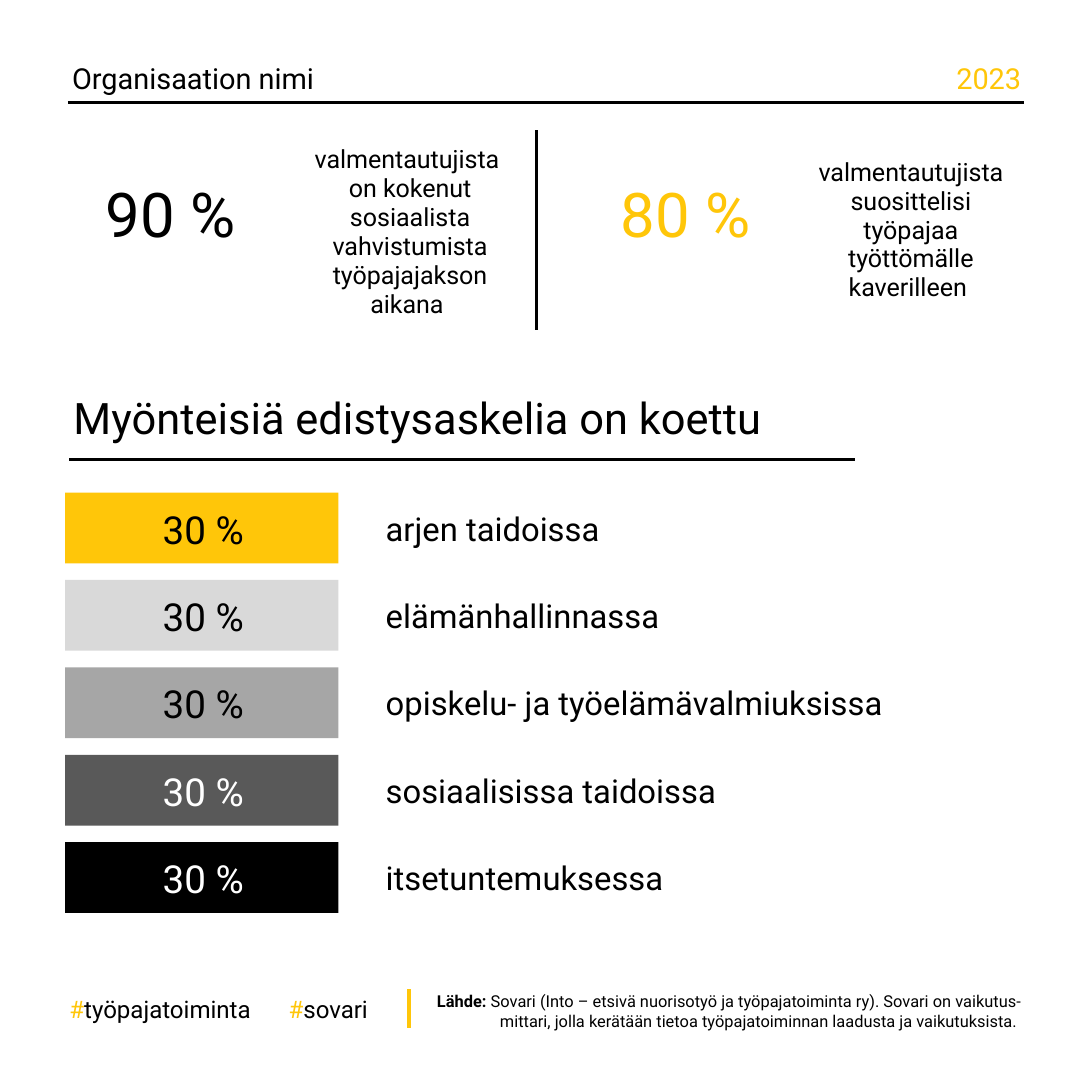
import pptx
import pptx.util
import pptx.dml.color
import pptx.enum.shapes
import pptx.enum.text
import lxml.etree
from pptx.util import Inches

COLORS = {"black": "000000", "white": "FFFFFF", "yellow": "FFC609",
          "light": "D9D9D9", "middle": "A6A6A6", "dark": "595959"}
ALIGN = pptx.enum.text.PP_ALIGN
ANCHOR = pptx.enum.text.MSO_ANCHOR

organisation = "Organisaation nimi"
year = "2023"
results = [
    ("90 %", "black", (0.47, 1.37, 1.5, 0.74),
     ["valmentautujista ", "on kokenut sosiaalista vahvistumista työpajajakson aikana "],
     (2.08, 0.99, 1.75, 1.36), (0.12, 0.05, 0.12, 0.05)),
    ("80 %", "yellow", (4.18, 1.37, 1.5, 0.74),
     ["valmentautujista ", "suosittelisi työpajaa työttömälle kaverilleen "],
     (5.73, 1.08, 1.63, 1.15), (0.16, 0.05, 0.12, 0.05)),
]
heading = "Myönteisiä edistysaskelia on koettu"
progress = [
    ("30 %", "arjen taidoissa", "yellow", "black"),
    ("30 %", "elämänhallinnassa", "light", "black"),
    ("30 %", "opiskelu- ja työelämävalmiuksissa", "middle", "black"),
    ("30 %", "sosiaalisissa taidoissa", "dark", "white"),
    ("30 %", "itsetuntemuksessa", "black", "white"),
]
hashtags = [("työpajatoiminta", 0.5, 1.49), ("sovari", 2.08, 0.67)]
reference = [
    [("Lähde: ", "black", True),
     ("Sovari (Into – etsivä nuorisotyö ja työpajatoiminta ry). Sovari on vaikutus-", "black", False)],
    [("mittari, jolla kerätään tietoa työpajatoiminnan laadusta ja vaikutuksista. ", "black", False)],
]
rules = [
    ((0.49, 0.74), (7.38, 0.74), "black", 1.5),
    ((0.5, 3.31), (6.16, 3.31), "black", 1.5),
    ((3.87, 0.94), (3.87, 2.38), "black", 1.5),
    ((2.95, 7.13), (2.95, 7.41), "yellow", 2),
]
BAR_LEFT, BAR_TOP, BAR_WIDTH, BAR_HEIGHT, BAR_PITCH = 0.47, 3.55, 1.97, 0.51, 0.63
LABEL_LEFT, LABEL_WIDTH, LABEL_HEIGHT = 2.66, 3.93, 0.39
HEADER_LINE = pptx.util.Pt(24.8)


def rgb(color):
    return pptx.dml.color.RGBColor.from_string(COLORS[color])


def apply(target, formats):
    for attribute, value in formats.items():
        setattr(target, attribute, value)


def write(shape, paragraphs, size, insets=(0, 0, 0, 0), anchor=ANCHOR.TOP,
          wrap=True, **paragraph_format):
    frame = shape.text_frame
    sides = ("margin_left", "margin_top", "margin_right", "margin_bottom")
    apply(frame, dict(zip(sides, map(Inches, insets)), word_wrap=wrap, vertical_anchor=anchor))
    for index, runs in enumerate(paragraphs):
        paragraph = frame.paragraphs[0] if index == 0 else frame.add_paragraph()
        apply(paragraph, {"alignment": ALIGN.LEFT, **paragraph_format})
        for text, color, bold in runs:
            run = paragraph.add_run()
            run.text = text
            apply(run.font, {"name": "Roboto", "size": pptx.util.Pt(size), "bold": bold})
            run.font.color.rgb = rgb(color)


def add_text(slide, place, paragraphs, size, **formats):
    write(slide.shapes.add_textbox(*map(Inches, place)), paragraphs, size, **formats)


def add_rule(slide, start, end, color, width):
    rule = slide.shapes.add_connector(
        pptx.enum.shapes.MSO_CONNECTOR.STRAIGHT, *map(Inches, start + end))
    rule.line.color.rgb = rgb(color)
    rule.line.width = pptx.util.Pt(width)
    lxml.etree.SubElement(rule._element.spPr, pptx.oxml.ns.qn("a:effectLst"))


def add_progress(slide, index, share, skill, fill, color):
    top = BAR_TOP + index * BAR_PITCH
    bar = slide.shapes.add_shape(
        pptx.enum.shapes.MSO_SHAPE.RECTANGLE,
        *map(Inches, (BAR_LEFT, top, BAR_WIDTH, BAR_HEIGHT)))
    bar.shadow.inherit = False
    bar.fill.solid()
    bar.fill.fore_color.rgb = rgb(fill)
    bar.line.fill.background()
    write(bar, [[(share, color, False)]], 20, insets=(0.02, 0.08, 0, 0.08),
          anchor=ANCHOR.MIDDLE, alignment=ALIGN.CENTER, line_spacing=HEADER_LINE)
    label_top = top + (BAR_HEIGHT - LABEL_HEIGHT) / 2
    add_text(slide, (LABEL_LEFT, label_top, LABEL_WIDTH, LABEL_HEIGHT),
             [[(skill, "black", False)]], 17, insets=(0.12, 0.05, 0.08, 0.05),
             anchor=ANCHOR.MIDDLE)


def main():
    deck = pptx.Presentation()
    apply(deck, {"slide_width": Inches(7.87), "slide_height": Inches(7.87)})
    slide = deck.slides.add_slide(deck.slide_layouts[6])

    add_text(slide, (0.5, 0.34, 4.27, 0.31), [[(organisation, "black", False)]], 15,
             insets=(0.02, 0, 0.04, 0.12), line_spacing=HEADER_LINE)
    add_text(slide, (6.37, 0.34, 0.99, 0.31), [[(year, "yellow", False)]], 15,
             insets=(0.02, 0, 0, 0.12), alignment=ALIGN.RIGHT, line_spacing=HEADER_LINE)
    for rule in rules:
        add_rule(slide, *rule)
    for share, color, share_place, caption, caption_place, caption_insets in results:
        add_text(slide, share_place, [[(share, color, False)]], 32,
                 insets=(0.02, 0.14, 0, 0.31), alignment=ALIGN.CENTER,
                 line_spacing=HEADER_LINE)
        add_text(slide, caption_place, [[(line, "black", False)] for line in caption], 13,
                 insets=caption_insets, anchor=ANCHOR.MIDDLE, alignment=ALIGN.CENTER,
                 line_spacing=pptx.util.Pt(15))
    add_text(slide, (0.53, 2.76, 6.86, 0.49), [[(heading, "black", False)]], 22.5,
             insets=(0, 0.05, 0.12, 0.05), anchor=ANCHOR.MIDDLE)
    for index, step in enumerate(progress):
        add_progress(slide, index, *step)
    for tag, left, width in hashtags:
        add_text(slide, (left, 7.1, width, 0.31),
                 [[("#", "yellow", False), (tag, "black", False)]], 12.5,
                 insets=(0, 0.05, 0, 0.05), wrap=False, line_spacing=1.07)
    add_text(slide, (3.11, 7.14, 4.25, 0.29), reference, 8.5,
             anchor=ANCHOR.MIDDLE, alignment=ALIGN.RIGHT)
    deck.save("out.pptx")


if __name__ == "__main__":
    main()
